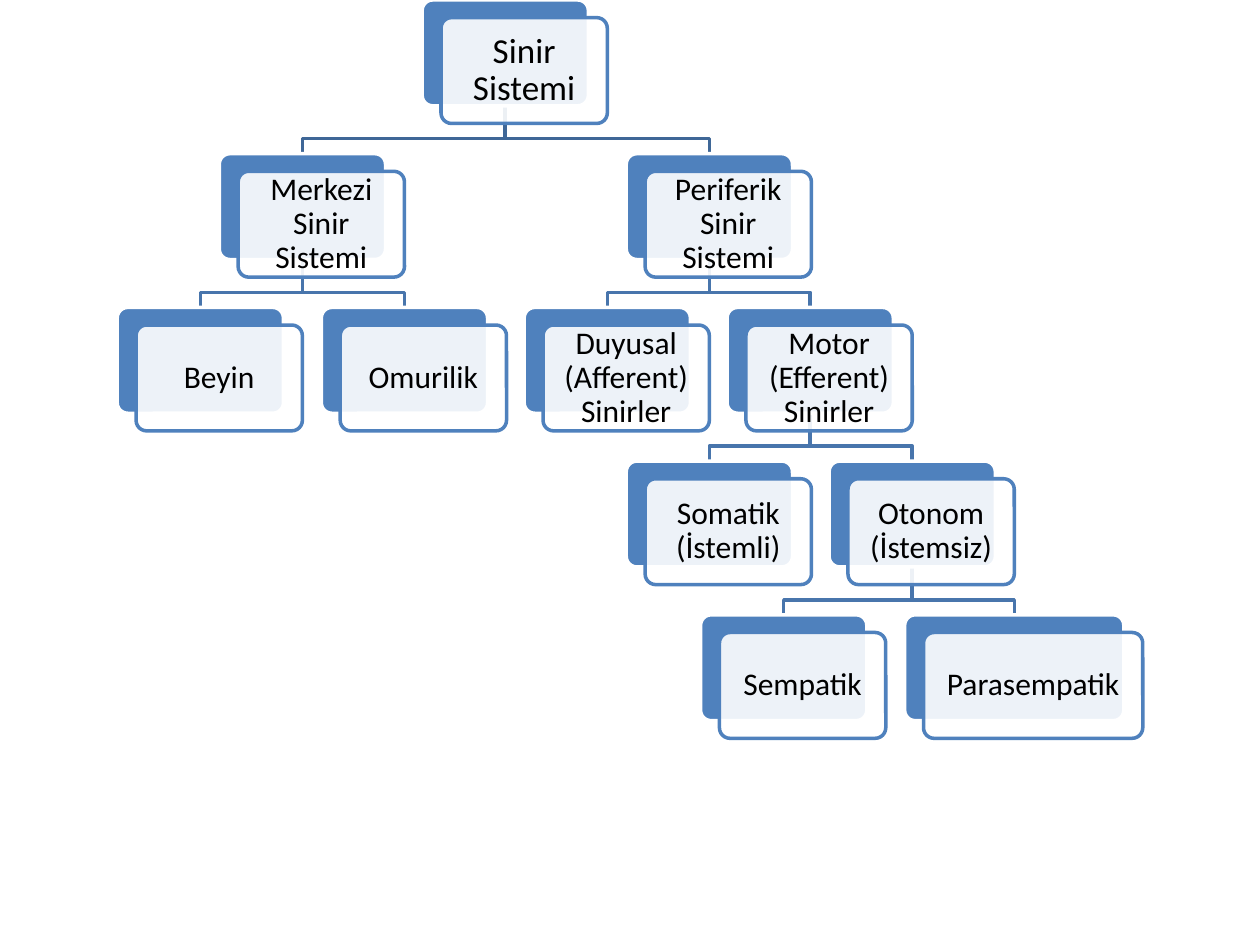
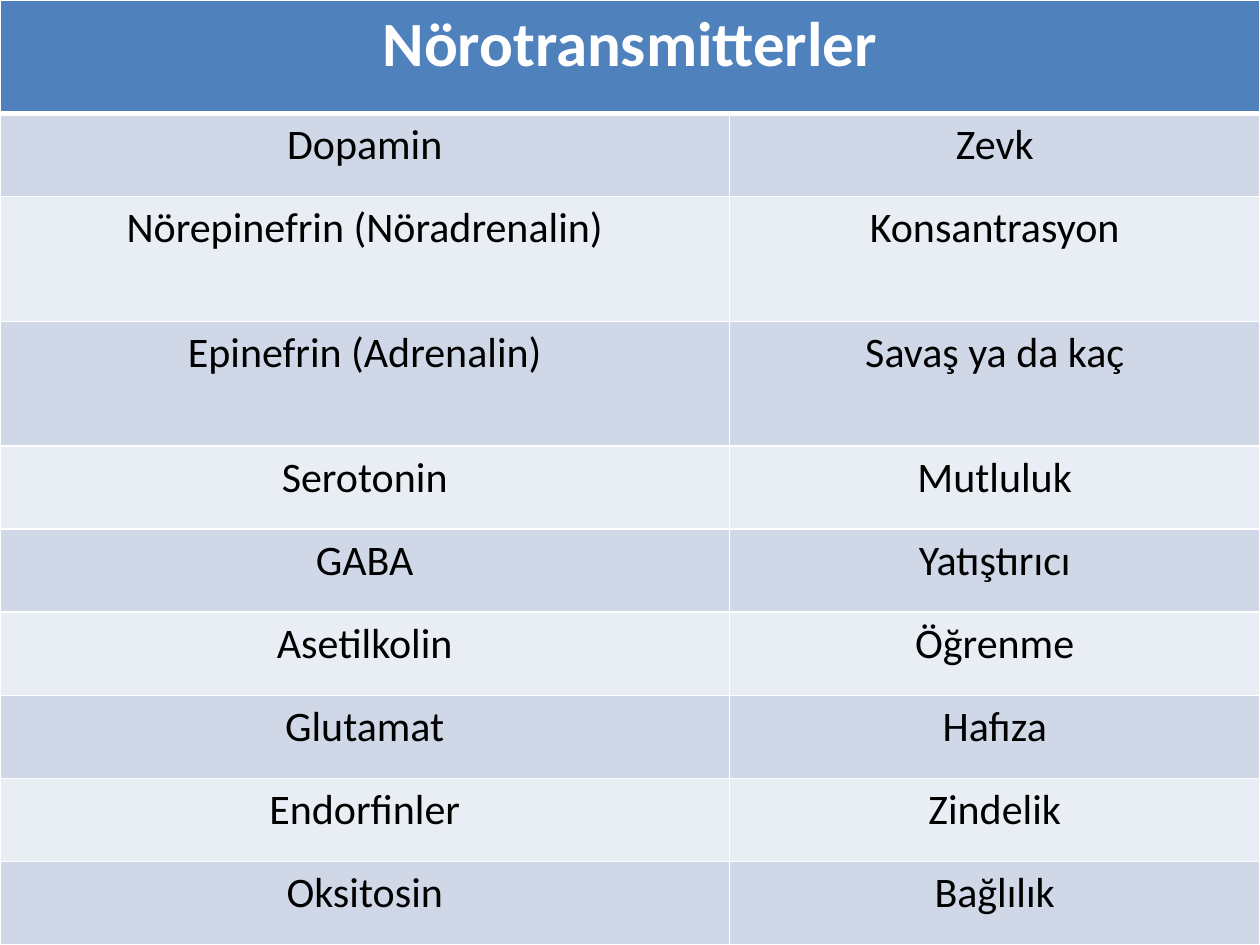
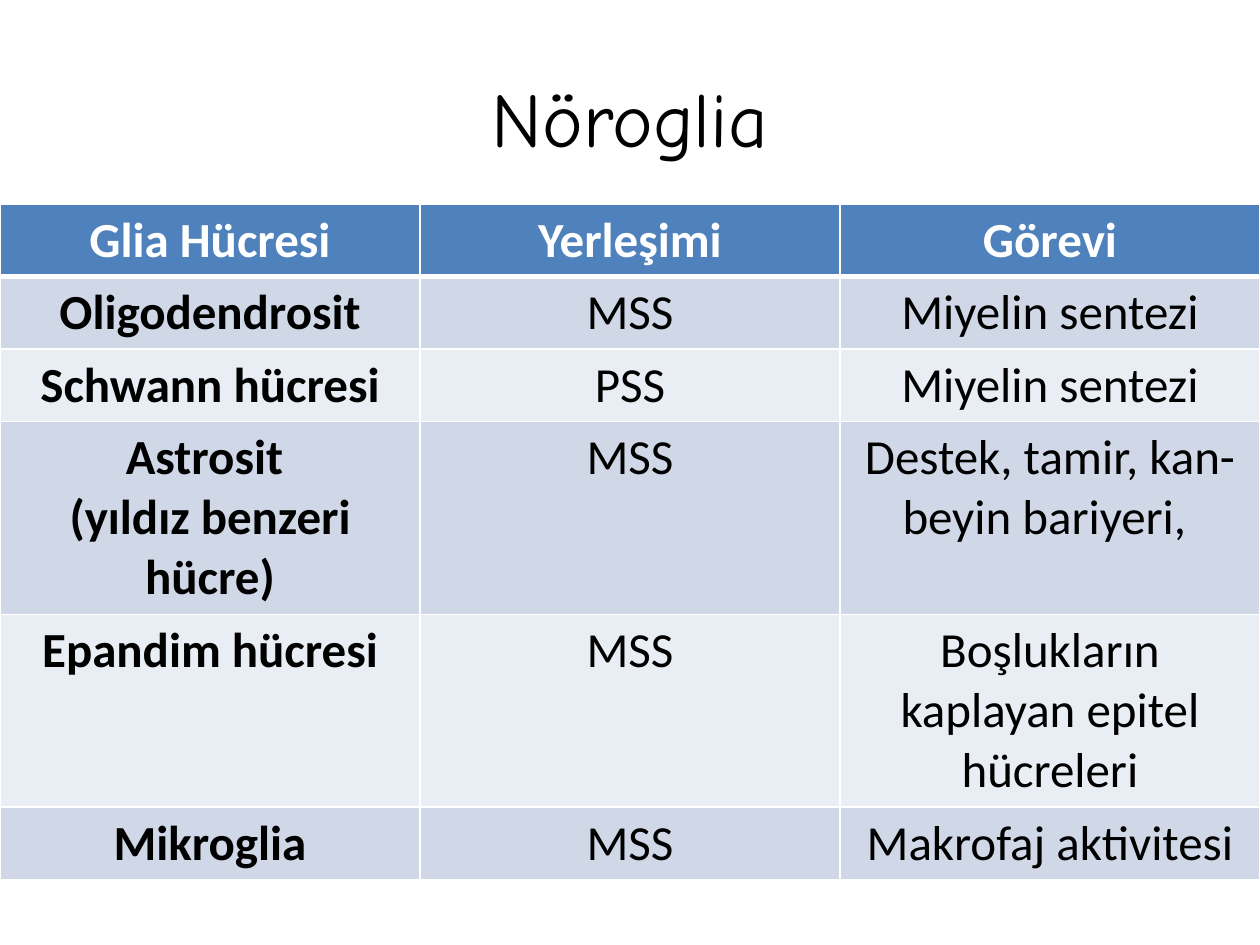
"""Build three slides on the nervous system: a tree and two tables."""
import pptx
import pptx.util
import pptx.dml.color
import pptx.enum.shapes
import pptx.enum.text
import pptx.oxml
import pptx.oxml.ns

Inches = pptx.util.Inches
Pt = pptx.util.Pt
FONT, TITLE_FONT = "Calibri", "Comic Neue"
BLUE, WHITE, BLACK = "4F81BD", "FFFFFF", "000000"
BANDS = ["D0D8E8", "E9EDF4"]
ROOT_LINK, LINK = "3F6797", "4875AC"

BOX_W, BOX_H, LEVEL_STEP = 1.32, 0.84, 1.22
SHIFT_X, SHIFT_Y = 0.15, 0.14
BEND = 0.26

NODES = [
    ("Sinir Sistemi", 3.35, 0, None),
    ("Merkezi Sinir Sistemi", 1.74, 1, 0),
    ("Beyin", 0.93, 2, 1),
    ("Omurilik", 2.55, 2, 1),
    ("Periferik Sinir Sistemi", 4.97, 1, 0),
    ("Duyusal (Afferent) Sinirler", 4.16, 2, 4),
    ("Motor (Efferent) Sinirler", 5.77, 2, 4),
    ("Somatik (İstemli)", 4.97, 3, 6),
    ("Otonom (İstemsiz)", 6.58, 3, 6),
    ("Sempatik", 5.56, 4, 8),
    ("Parasempatik", 7.18, 4, 8),
]
WIDE_BOXES = {"Parasempatik": 1.74}

TRANSMITTERS = [
    ("Nörotransmitterler", ""),
    ("Dopamin", "Zevk"),
    ("Nörepinefrin (Nöradrenalin)", "Konsantrasyon"),
    ("Epinefrin (Adrenalin)", "Savaş ya da kaç"),
    ("Serotonin", "Mutluluk"),
    ("GABA", "Yatıştırıcı"),
    ("Asetilkolin", "Öğrenme"),
    ("Glutamat", "Hafıza"),
    ("Endorfinler", "Zindelik"),
    ("Oksitosin", "Bağlılık"),
]
GLIA = [
    ("Glia Hücresi", "Yerleşimi", "Görevi"),
    ("Oligodendrosit", "MSS", "Miyelin sentezi"),
    ("Schwann hücresi", "PSS", "Miyelin sentezi"),
    ("Astrosit \n(yıldız benzeri hücre)", "MSS", "Destek, tamir, kan-beyin bariyeri, "),
    ("Epandim hücresi", "MSS", "Boşlukların kaplayan epitel hücreleri"),
    ("Mikroglia", "MSS", "Makrofaj aktivitesi"),
]


def rgb(value):
    """Turn a hex string into a colour."""
    return pptx.dml.color.RGBColor.from_string(value)


def write(tf, text, size, color=BLACK, font=FONT, bold=False, spacing=None):
    """Write centred paragraphs, one per line of text."""
    for i, line in enumerate(text.split("\n")):
        p = tf.add_paragraph() if i else tf.paragraphs[0]
        p.alignment = pptx.enum.text.PP_ALIGN.CENTER
        p.line_spacing = spacing
        r = p.add_run()
        r.text = line
        r.font.size, r.font.name, r.font.bold = Pt(size), font, bold
        r.font.color.rgb = rgb(color)


def add_link(s, parent, child):
    """Draw the bent line from a parent box to a child box."""
    (_, x1, level1, _), (_, x2, level2, _) = parent, child
    x1, x2 = x1 + BOX_W / 2, x2 + BOX_W / 2
    if child[0] in WIDE_BOXES:
        x2 += (WIDE_BOXES[child[0]] - BOX_W) / 2
    y1, y2 = level1 * LEVEL_STEP + BOX_H, level2 * LEVEL_STEP
    points = [(x1, y1), (x1, y1 + BEND), (x2, y1 + BEND), (x2, y2)]
    points = [(Inches(x), Inches(y)) for x, y in points]
    builder = s.shapes.build_freeform(*points[0])
    builder.add_line_segments(points[1:], close=False)
    sp = builder.convert_to_shape()
    sp.shadow.inherit = False
    sp.fill.background()
    sp.line.color.rgb = rgb(LINK if level1 else ROOT_LINK)
    sp.line.width = Pt(2)


def add_card(s, x, y, w, fill, line):
    """Add one rounded box of the tree."""
    kind = pptx.enum.shapes.MSO_SHAPE.ROUNDED_RECTANGLE
    sp = s.shapes.add_shape(kind, Inches(x), Inches(y), Inches(w), Inches(BOX_H))
    sp.adjustments[0] = 0.1
    sp.shadow.inherit = False
    sp.fill.solid()
    sp.fill.fore_color.rgb = rgb(fill)
    sp.line.color.rgb = rgb(line)
    sp.line.width = Pt(2)
    return sp


def add_node(s, node):
    """Add a blue box with a translucent labelled box in front."""
    text, x, level, parent = node
    y, w = level * LEVEL_STEP, WIDE_BOXES.get(text, BOX_W)
    add_card(s, x, y, w, BLUE, WHITE)
    sp = add_card(s, x + SHIFT_X, y + SHIFT_Y, w, WHITE, BLUE)
    color = sp.fill._xPr.find(".//" + pptx.oxml.ns.qn("a:srgbClr"))
    color.append(pptx.oxml.parse_xml(f'<a:alpha {pptx.oxml.ns.nsdecls("a")} val="90000"/>'))
    tf = sp.text_frame
    tf.word_wrap = True
    tf.vertical_anchor = pptx.enum.text.MSO_ANCHOR.MIDDLE
    tf.margin_left = tf.margin_right = tf.margin_top = tf.margin_bottom = Inches(0.07)
    write(tf, text, 18 if level else 20, spacing=0.9)


def set_borders(cell, top, bottom):
    """Give a cell white borders with the given top and bottom widths."""
    tcPr = cell._tc.get_or_add_tcPr()
    for side, width in (("L", 1), ("R", 1), ("T", top), ("B", bottom)):
        tcPr.append(pptx.oxml.parse_xml(
            f'<a:ln{side} {pptx.oxml.ns.nsdecls("a")} w="{Pt(width)}">'
            f'<a:solidFill><a:srgbClr val="{WHITE}"/></a:solidFill></a:ln{side}>'))


def add_table(s, rows, y, widths, heights, size, header_size, bold_first=False):
    """Add a full-width banded table with a blue header row."""
    table = s.shapes.add_table(len(rows), len(widths), 0, Inches(y),
                               Inches(sum(widths)), Inches(sum(heights))).table
    for column, width in zip(table.columns, widths):
        column.width = Inches(width)
    for i, (values, height) in enumerate(zip(rows, heights)):
        table.rows[i].height = Inches(height)
        header = i == 0
        for j, value in enumerate(values):
            cell = table.cell(i, j)
            set_borders(cell, 3 if i == 1 else 1, 3 if header else 1)
            cell.fill.solid()
            cell.fill.fore_color.rgb = rgb(BLUE if header else BANDS[(i - 1) % 2])
            if value:
                write(cell.text_frame, value, header_size if header else size,
                      color=WHITE if header else BLACK,
                      bold=header or (bold_first and j == 0))
    return table


def add_title(s, text):
    """Fill and place the title placeholder."""
    sp = s.shapes.title
    sp.left, sp.top, sp.width, sp.height = Inches(0.5), Inches(0.3), Inches(9), Inches(1.25)
    sp.text_frame.vertical_anchor = pptx.enum.text.MSO_ANCHOR.MIDDLE
    write(sp.text_frame, text, 44, font=TITLE_FONT)


def main():
    """Build and save the slides."""
    prs = pptx.Presentation()
    prs.slide_width, prs.slide_height = Inches(10), Inches(7.5)
    title_only, blank = prs.slide_layouts[5], prs.slide_layouts[6]

    s = prs.slides.add_slide(blank)
    for node in NODES:
        if node[3] is not None:
            add_link(s, NODES[node[3]], node)
    for node in NODES:
        add_node(s, node)

    s = prs.slides.add_slide(blank)
    heights = [0.9, 0.66, 0.99, 0.99] + [0.66] * 6
    table = add_table(s, TRANSMITTERS, 0, [5.79, 4.21], heights, 24, 36)
    table.cell(0, 0).merge(table.cell(0, 1))

    s = prs.slides.add_slide(title_only)
    add_title(s, "Nöroglia")
    heights = [0.57, 0.57, 0.57, 1.53, 1.53, 0.57]
    add_table(s, GLIA, 1.62, [10 / 3] * 3, heights, 28, 28, bold_first=True)

    prs.save("out.pptx")


if __name__ == "__main__":
    main()
